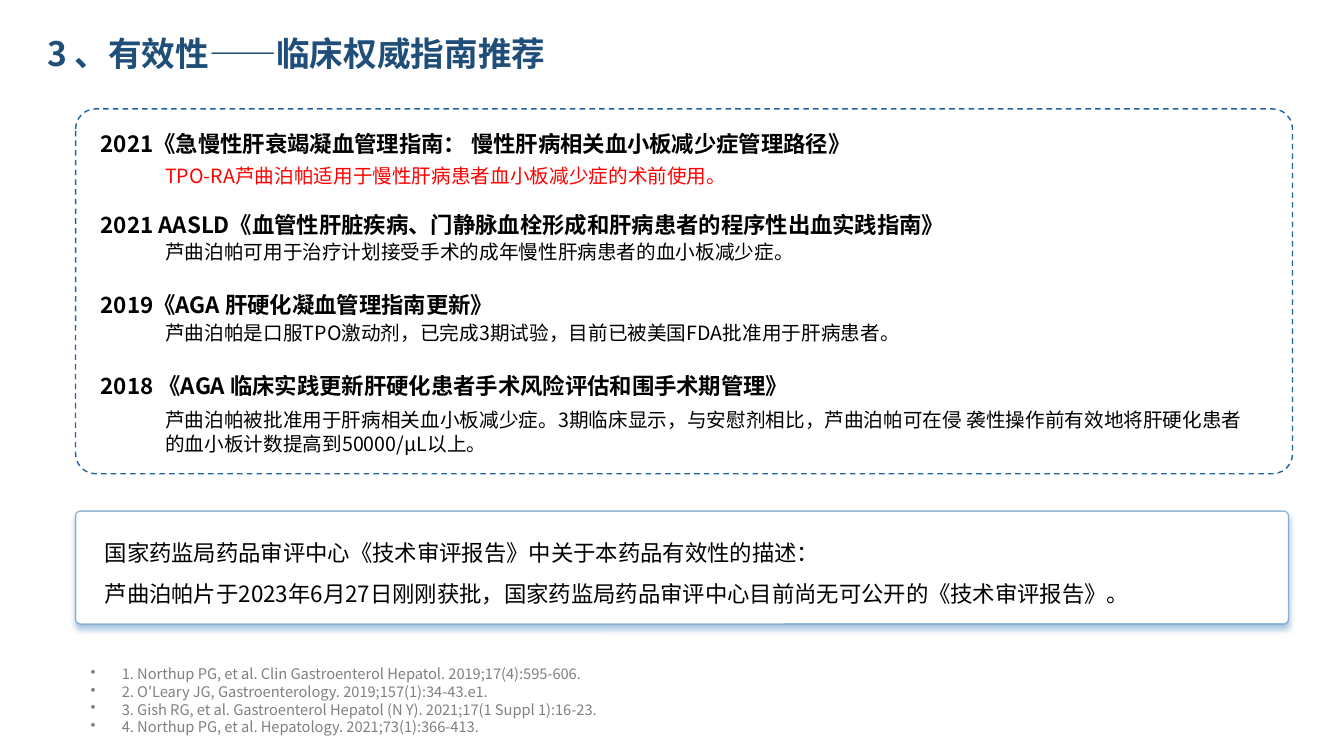
from pptx import Presentation
from pptx.dml.color import RGBColor
from pptx.enum.dml import MSO_LINE
from pptx.enum.shapes import MSO_SHAPE
from pptx.enum.text import MSO_ANCHOR
from pptx.oxml import parse_xml
from pptx.oxml.ns import nsdecls
from pptx.util import Inches, Pt

FONT = "Noto Sans CJK SC"
TITLE = "3 、有效性——临床权威指南推荐"
GUIDELINES = [
    ("2021《急慢性肝衰竭凝血管理指南： 慢性肝病相关血小板减少症管理路径》",
     "TPO-RA芦曲泊帕适用于慢性肝病患者血小板减少症的术前使用。", 1.58, 0.34, "FF0000"),
    ("2021 AASLD《血管性肝脏疾病、门静脉血栓形成和肝病患者的程序性出血实践指南》",
     "芦曲泊帕可用于治疗计划接受手术的成年慢性肝病患者的血小板减少症。", 2.33, 0.34, "000000"),
    ("2019《AGA 肝硬化凝血管理指南更新》",
     "芦曲泊帕是口服TPO激动剂，已完成3期试验，目前已被美国FDA批准用于肝病患者。", 3.13, 0.34, "000000"),
    ("2018 《AGA 临床实践更新肝硬化患者手术风险评估和围手术期管理》",
     "芦曲泊帕被批准用于肝病相关血小板减少症。3期临床显示，与安慰剂相比，芦曲泊帕可在侵 "
     "袭性操作前有效地将肝硬化患者的血小板计数提高到50000/μL以上。", 4, 0.57, "000000"),
]
REVIEW = [
    "国家药监局药品审评中心《技术审评报告》中关于本药品有效性的描述：",
    "芦曲泊帕片于2023年6月27日刚刚获批，国家药监局药品审评中心目前尚无可公开的《技术审评报告》。",
]
REFERENCES = [
    "1. Northup PG, et al. Clin Gastroenterol Hepatol. 2019;17(4):595-606.",
    "2. O'Leary JG, Gastroenterology. 2019;157(1):34-43.e1.",
    "3. Gish RG, et al. Gastroenterol Hepatol (N Y). 2021;17(1 Suppl 1):16-23.",
    "4. Northup PG, et al. Hepatology. 2021;73(1):366-413.",
]


def color(value):
    return RGBColor.from_string(value)


def add_text(page, lines, area, size, ink="000000", bold=False, spacing=1, after=0):
    box = page.shapes.add_textbox(*map(Inches, area))
    frame = box.text_frame
    frame.word_wrap = True
    frame.text = "\n".join(lines)
    for para in frame.paragraphs:
        para.line_spacing = spacing
        para.space_after = Pt(after)
        para.font.name = FONT
        para.font.size = Pt(size)
        para.font.bold = bold
        para.font.color.rgb = color(ink)
        para.font._element.append(parse_xml(f'<a:ea {nsdecls("a")} typeface="{FONT}"/>'))
    return frame


def add_panel(page, area, corner, outline):
    panel = page.shapes.add_shape(MSO_SHAPE.ROUNDED_RECTANGLE, *map(Inches, area))
    panel.adjustments[0] = corner
    panel.shadow.inherit = False
    panel.fill.background()
    panel.line.color.rgb = color(outline)
    panel.line.width = Pt(1)
    return panel


def add_bullet(para):
    props = para._p.get_or_add_pPr()
    props.set("marL", str(Inches(0.31)))
    props.set("indent", str(-Inches(0.31)))
    props.insert_element_before(
        parse_xml(f'<a:buChar {nsdecls("a")} char="•"/>'), "a:tabLst", "a:defRPr", "a:extLst")


def soften_panel(panel, tint):
    panel.line.color._xFill.find(".//{*}srgbClr").append(
        parse_xml(f'<a:alpha {nsdecls("a")} val="50000"/>'))
    effects = panel._element.spPr.find("{*}effectLst")
    effects.append(parse_xml(
        f'<a:outerShdw {nsdecls("a")} blurRad="{Pt(4)}" dist="{Pt(3)}" dir="{93 * 60000}" '
        f'algn="t" rotWithShape="0"><a:srgbClr val="{tint}"><a:alpha val="40000"/>'
        '</a:srgbClr></a:outerShdw>'))


def main():
    deck = Presentation()
    deck.slide_width, deck.slide_height = Inches(13.33), Inches(7.5)
    page = deck.slides.add_slide(deck.slide_layouts[6])

    title = add_text(page, [TITLE], (0.37, -0.03, 12.68, 1.11), 24, "1F4E79", True)
    title.vertical_anchor = MSO_ANCHOR.MIDDLE

    headings = [guideline[0] for guideline in GUIDELINES]
    frame = add_text(page, headings, (0.4, 1.11, 12.24, 3.29), 16,
                     bold=True, spacing=1.5, after=28.8)
    frame.margin_left = Inches(0.6)
    guideline_panel = add_panel(page, (0.75, 1.08, 12.07, 3.62), 0.055, "1E64A5")
    guideline_panel.line.dash_style = MSO_LINE.DASH

    review_panel = add_panel(page, (0.75, 5.07, 12.03, 1.12), 0.043, "2E75B6")
    review_panel.fill.solid()
    review_panel.fill.fore_color.rgb = color("FFFFFF")
    soften_panel(review_panel, "2E75B6")
    add_text(page, REVIEW, (0.94, 5.17, 11.21, 0.86), 16, spacing=1.5)

    references = add_text(page, REFERENCES, (0.8, 6.55, 11.34, 0.81), 10.5, "808080")
    for para in references.paragraphs:
        add_bullet(para)

    for _, finding, top, height, ink in GUIDELINES:
        frame = add_text(page, [finding], (1.54, top, 11.21, height), 14, ink)
        frame.margin_right = Inches(0.25)

    deck.save("out.pptx")


if __name__ == "__main__":
    main()
